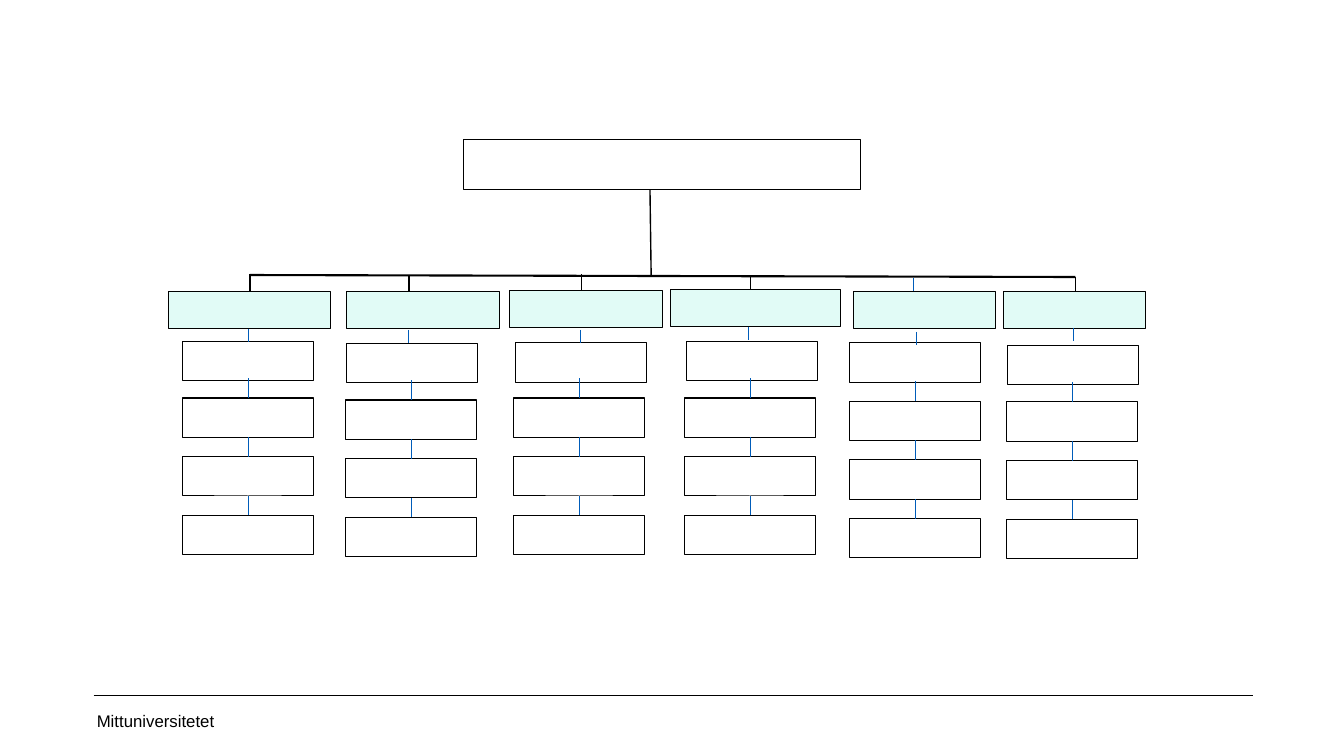
from pptx import Presentation
from pptx import util as u
from pptx.dml.color import RGBColor
from pptx.enum import shapes, text
from pptx.oxml.ns import qn
from lxml import etree

BLACK = RGBColor(0x00, 0x00, 0x00)
WHITE = RGBColor(0xFF, 0xFF, 0xFF)
MINT = RGBColor(0xE1, 0xFB, 0xF6)
BLUE = RGBColor(0x00, 0x5C, 0xB9)

# All lengths in centimetres
FOOTER = "Mittuniversitetet"
ROOT = (11.68, 3.51, 10.01, 1.27)
TRUNK = (16.38, 4.78, 16.41, 6.96)
BAR = (6.3, 6.93, 27.1, 6.98)
FOOTER_RULE = (2.36, 17.53, 31.57, 17.53)

# drop: x, top, bottom; head: left, top, width; stem: x, top;
# first: left, top of the first box; rest: left, top of the second box
BRANCHES = [
    dict(drop=(6.3, 6.91, 7.52), head=(4.24, 7.34, 4.09), stem=(6.26, 8.28),
         first=(4.6, 8.61), rest=(4.6, 10.03)),
    dict(drop=(10.31, 6.96, 7.47), head=(8.74, 7.34, 3.86), stem=(10.29, 8.31),
         first=(8.74, 8.66), rest=(8.71, 10.08)),
    dict(drop=(14.66, 6.91, 7.52), head=(12.83, 7.32, 3.86), stem=(14.63, 8.31),
         first=(13.0, 8.64), rest=(12.95, 10.03)),
    dict(drop=(18.92, 6.98, 7.29), head=(16.89, 7.29, 4.29), stem=(18.85, 8.23),
         first=(17.3, 8.61), rest=(17.25, 10.03)),
    dict(drop=(23.01, 7.01, 7.34), head=(21.51, 7.34, 3.58), stem=(23.09, 8.36),
         first=(21.41, 8.64), rest=(21.41, 10.11), drop_color=BLUE, drop_weight=0.5),
    dict(drop=(27.1, 6.98, 7.47), head=(25.3, 7.34, 3.58), stem=(27.05, 8.26),
         first=(25.4, 8.71), rest=(25.37, 10.13)),
]
HEAD_HEIGHT = 0.94
BOX_WIDTH, BOX_HEIGHT = 3.3, 0.99
ROW_PITCH = 1.48
REST_ROWS = 3
STEM_LENGTH, LINK_LENGTH = 0.33, 0.5


def add_box(page, left, top, width, height, fill=None):
    box = page.shapes.add_shape(shapes.MSO_SHAPE.RECTANGLE, u.Cm(left), u.Cm(top),
                                u.Cm(width), u.Cm(height))
    box.shadow.inherit = False
    if fill is None:
        box.fill.background()
    else:
        box.fill.solid()
        box.fill.fore_color.rgb = fill
    box.line.color.rgb = BLACK
    box.line.width = u.Pt(0.75)


def add_line(page, x1, y1, x2, y2, color=BLACK, weight=1):
    line = page.shapes.add_connector(shapes.MSO_CONNECTOR.STRAIGHT, u.Cm(x1), u.Cm(y1),
                                     u.Cm(x2), u.Cm(y2))
    line.line.color.rgb = color
    line.line.width = u.Pt(weight)
    etree.SubElement(line._element.spPr, qn("a:effectLst"))


def add_text(page, words, left, top, width, height, size=12, font="Arial", color=BLACK):
    box = page.shapes.add_textbox(u.Cm(left), u.Cm(top), u.Cm(width), u.Cm(height))
    frame = box.text_frame
    frame.word_wrap = True
    frame.vertical_anchor = text.MSO_ANCHOR.MIDDLE
    frame.margin_left, frame.margin_right = u.Cm(0.1), u.Cm(0.25)
    frame.margin_top = frame.margin_bottom = u.Cm(0.13)
    span = frame.paragraphs[0].add_run()
    span.text = words
    span.font.size = u.Pt(size)
    span.font.name = font
    span.font.color.rgb = color


def add_branch(page, branch):
    x, top, bottom = branch["drop"]
    add_line(page, x, top, x, bottom, color=branch.get("drop_color", BLACK),
             weight=branch.get("drop_weight", 1))
    add_box(page, *branch["head"], HEAD_HEIGHT, fill=MINT)

    left, second_top = branch["rest"]
    tops = [second_top + row * ROW_PITCH for row in range(REST_ROWS)]
    add_box(page, *branch["first"], BOX_WIDTH, BOX_HEIGHT, fill=WHITE)
    for top in tops:
        add_box(page, left, top, BOX_WIDTH, BOX_HEIGHT, fill=WHITE)

    x, top = branch["stem"]
    add_line(page, x, top, x, top + STEM_LENGTH, color=BLUE, weight=0.5)
    middle = left + BOX_WIDTH / 2
    for top in tops:
        add_line(page, middle, top, middle, top - LINK_LENGTH, color=BLUE, weight=0.5)


def main():
    deck = Presentation()
    deck.slide_width, deck.slide_height = u.Cm(33.87), u.Cm(19.05)
    page = deck.slides.add_slide(deck.slide_layouts[6])

    add_text(page, FOOTER, 2.34, 17.65, 7.62, 1.02)
    add_line(page, *FOOTER_RULE, weight=0.25)
    add_box(page, *ROOT)
    add_line(page, *TRUNK)
    add_line(page, *BAR, weight=1.5)
    for branch in BRANCHES:
        add_branch(page, branch)

    deck.save("out.pptx")


if __name__ == "__main__":
    main()
